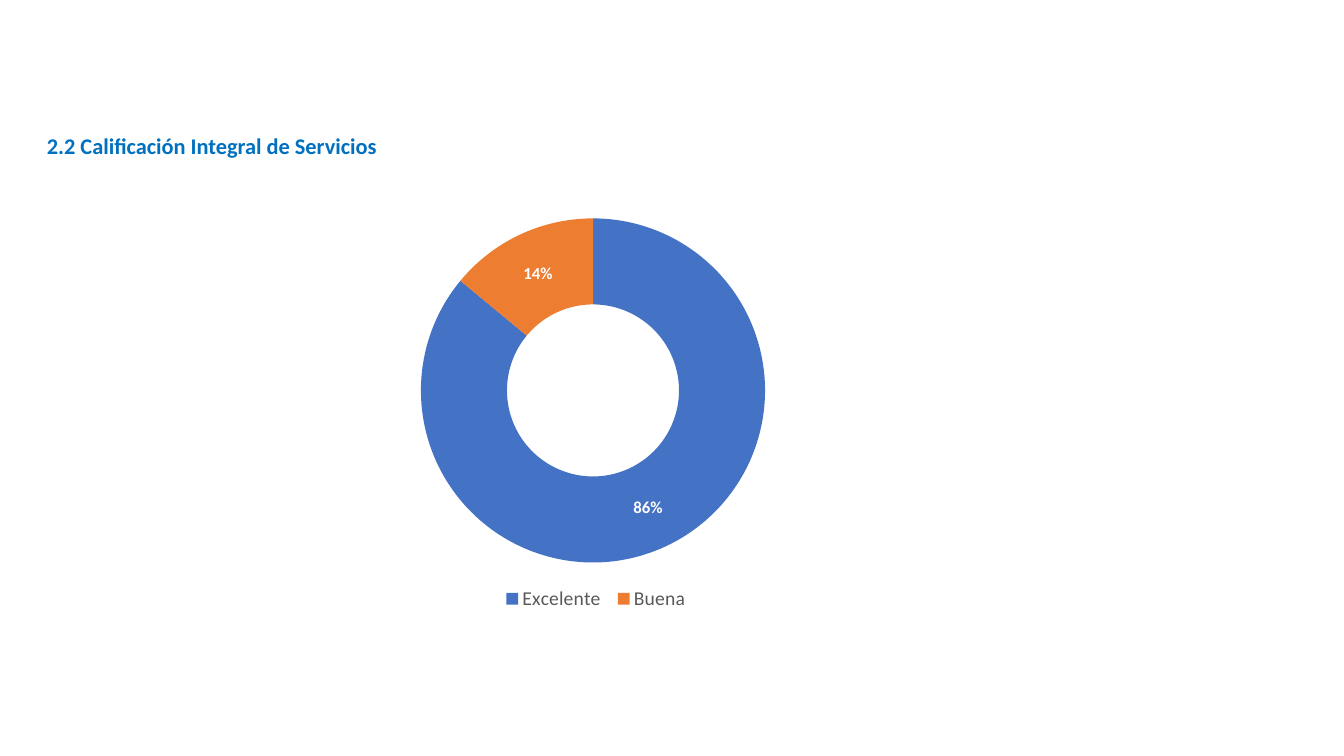
from lxml.etree import SubElement
from pptx import Presentation
from pptx.chart.data import CategoryChartData
from pptx.dml.color import RGBColor
from pptx.enum.chart import XL_CHART_TYPE, XL_LEGEND_POSITION
from pptx.oxml.ns import qn
from pptx.util import Pt

EMU_PER_PX = 914400 / 100.8
COLORS = {
    "heading": "0070C0",
    "Excelente": "4472C4",
    "Buena": "ED7D31",
    "legend": "595959",
    "label": "FFFFFF",
}
RATINGS = {"Excelente": 86, "Buena": 14}
HEADING_FORMAT = {"name": "Calibri", "size": Pt(16), "bold": True}
LEGEND_FORMAT = {"name": "Calibri", "size": Pt(14), "bold": False}
LABEL_FORMAT = {"name": "Calibri", "size": Pt(12), "bold": True}


def px(value):
    return round(value * EMU_PER_PX)


def format_font(font, values, color):
    for name, value in values.items():
        setattr(font, name, value)
    font.color.rgb = RGBColor.from_string(COLORS[color])


def place_manually(element, position, bounds, target=None):
    for old_layout in element.findall(qn("c:layout")):
        element.remove(old_layout)
    layout = SubElement(element, qn("c:layout"))
    element.insert(position, layout)
    manual = SubElement(layout, qn("c:manualLayout"))
    settings = {"layoutTarget": target} if target else {}
    settings.update(xMode="edge", yMode="edge")
    settings.update(zip("xywh", bounds))
    for name, value in settings.items():
        SubElement(manual, qn(f"c:{name}")).set("val", str(value))


def add_heading(slide, text, left, top, width, height):
    shape = slide.shapes.add_textbox(px(left), px(top), px(width), px(height))
    shape.text_frame.word_wrap = True
    paragraph = shape.text_frame.paragraphs[0]
    paragraph.text = text
    paragraph.line_spacing = 0.9
    format_font(paragraph.font, HEADING_FORMAT, "heading")


def add_ratings_chart(slide, left, top, width, height):
    data = CategoryChartData()
    data.categories = list(RATINGS)
    data.add_series("Series 1", list(RATINGS.values()))
    chart = slide.shapes.add_chart(
        XL_CHART_TYPE.DOUGHNUT, px(left), px(top), px(width), px(height), data
    ).chart
    chart.has_title = False
    chart.font.name = "Calibri"
    chart.font.size = Pt(10)

    plot = chart.plots[0]
    plot.vary_by_categories = True
    for index, category in enumerate(RATINGS):
        fill = plot.series[0].points[index].format.fill
        fill.solid()
        fill.fore_color.rgb = RGBColor.from_string(COLORS[category])

    labels = plot.series[0].data_labels
    labels.show_percentage = True
    labels.show_value = False
    labels.number_format = "0%"
    labels.number_format_is_linked = False
    format_font(labels.font, LABEL_FORMAT, "label")

    chart.has_legend = True
    legend = chart.legend
    legend.position = XL_LEGEND_POSITION.TOP
    legend.include_in_layout = False
    format_font(legend.font, LEGEND_FORMAT, "legend")
    plot_area = chart.element.find(".//" + qn("c:plotArea"))
    place_manually(plot_area, 0, (0.245, 0.171, 0.482, 0.66), "inner")
    legend_element = chart.element.find(".//" + qn("c:legend"))
    place_manually(legend_element, 1, (0.35, 0.86, 0.28, 0.08))


def main():
    presentation = Presentation()
    presentation.slide_width = px(1344)
    presentation.slide_height = px(756)
    slide = presentation.slides.add_slide(presentation.slide_layouts[6])
    add_heading(slide, "2.2 Calificación Integral de Servicios", 37, 130, 1233, 559)
    add_ratings_chart(slide, 246, 129, 714, 522)
    presentation.save("out.pptx")


if __name__ == "__main__":
    main()
